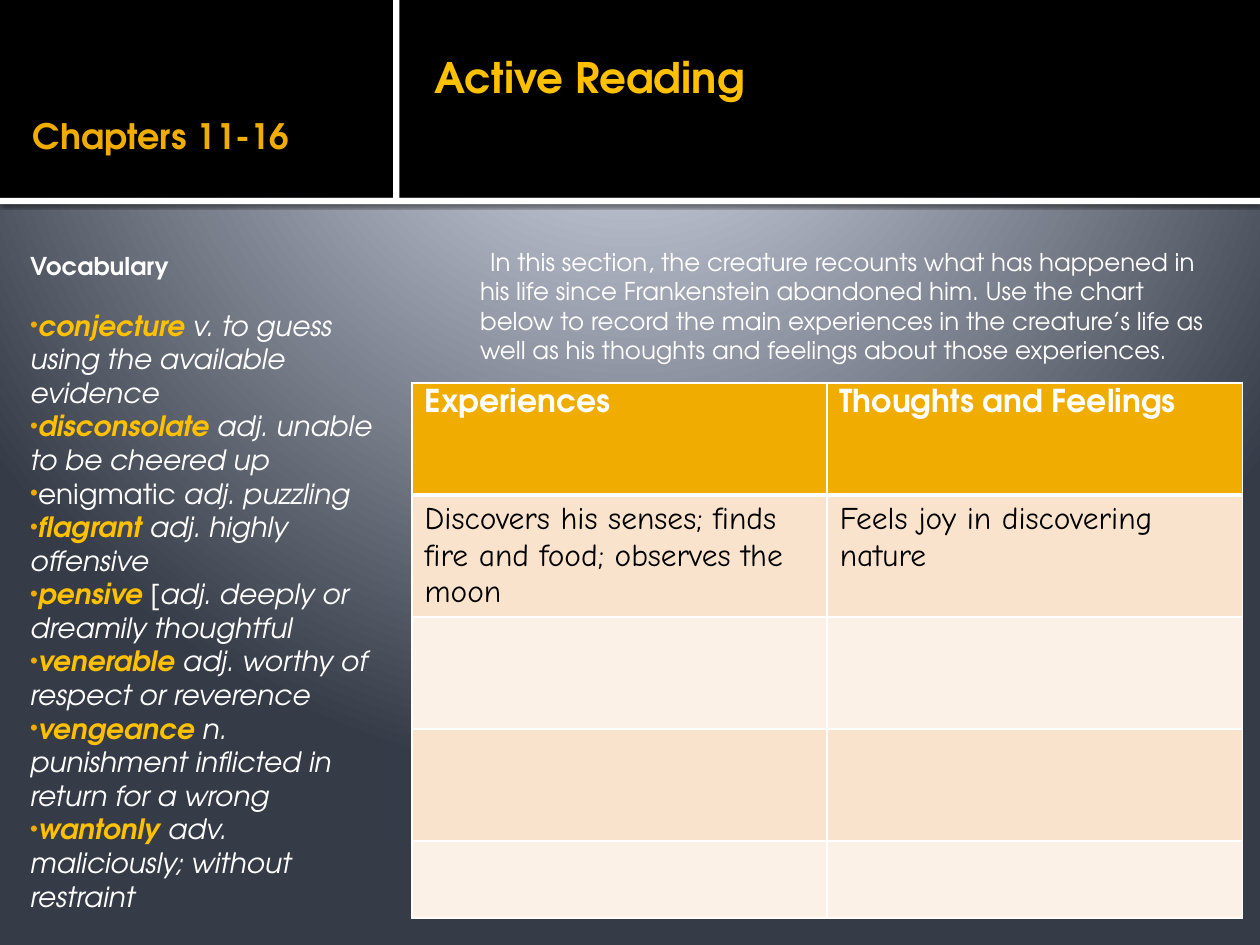
from lxml.etree import SubElement
from pptx import Presentation
from pptx.dml.color import RGBColor
from pptx.enum.shapes import MSO_SHAPE
from pptx.enum.text import MSO_ANCHOR, MSO_AUTO_SIZE, PP_ALIGN
from pptx.oxml import parse_xml
from pptx.oxml.ns import nsdecls, qn
from pptx.util import Inches, Pt

WHITE = RGBColor(0xFF, 0xFF, 0xFF)
BLACK = RGBColor(0, 0, 0)
AMBER = RGBColor(0xF0, 0xAD, 0x00)
GOLD = RGBColor(0xFF, 0xC0, 0x00)
PEACH = RGBColor(0xF9, 0xE3, 0xCC)
CREAM = RGBColor(0xFC, 0xF1, 0xE7)
GRADIENT = [(0, "C1C5D3"), (12, "C1C5D3"), (20, "BFC4D2"), (100, "353B47")]

SANS = "TeX Gyre Adventor"
COMIC = "Comic Neue"
BODY_INSETS = (0.06, 0.1, 0.1, 0.05)

KEY = dict(color=GOLD, bold=True, italic=True)
PLAIN = dict()
DEFINITION = dict(italic=True)
VOCABULARY = [
    [("conjecture ", KEY), ("v. to guess using the available evidence", DEFINITION)],
    [("disconsolate ", KEY), ("adj. unable to be cheered up", DEFINITION)],
    [("enigmatic ", PLAIN), ("adj. puzzling", DEFINITION)],
    [("flagrant ", KEY), ("adj. highly offensive", DEFINITION)],
    [("pensive", KEY), (" [", PLAIN), ("adj. deeply or dreamily thoughtful", DEFINITION)],
    [("venerable ", KEY), ("adj. worthy of respect or reverence", DEFINITION)],
    [("vengeance ", KEY), ("n. punishment inflicted in return for a wrong", DEFINITION)],
    [("wantonly ", KEY), ("adv. maliciously; without restraint", DEFINITION)],
]
INTRO = ("In this section, the creature recounts what has happened in his life since "
         "Frankenstein abandoned him. Use the chart below to record the main experiences "
         "in the creature’s life as well as his thoughts and feelings about those experiences.")
ROWS = [
    ("Experiences", "Thoughts and Feelings"),
    ("Discovers his senses; finds fire and food; observes the moon",
     "Feels joy in discovering nature"),
    ("", ""), ("", ""), ("", ""),
]
ROW_HEIGHTS = [0.89, 0.89, 0.89, 0.89, 0.61]


def add_run(p, text, size=16, color=WHITE, bold=False, italic=False, font=SANS):
    r = p.add_run()
    r.text = text
    f = r.font
    f.name, f.size, f.bold, f.italic = font, Pt(size), bold, italic
    f.color.rgb = color


def set_background(s):
    """Radial gradient centred above the slide."""
    stops = "".join(f'<a:gs pos="{pos * 1000}"><a:srgbClr val="{color}"/></a:gs>'
                    for pos, color in GRADIENT)
    fill = s.background.fill
    fill.solid()
    bg_pr = s.element.cSld.find(qn("p:bg")).find(qn("p:bgPr"))
    bg_pr.replace(bg_pr[0], parse_xml(
        f'<a:gradFill {nsdecls("a")} rotWithShape="1"><a:gsLst>{stops}</a:gsLst>'
        '<a:path path="circle"><a:fillToRect l="10000" t="-25000" r="10000" b="125000"/>'
        '</a:path></a:gradFill>'))


def add_band(s, order, box, color):
    """Plain rectangle placed behind the placeholders."""
    sp = s.shapes.add_shape(MSO_SHAPE.RECTANGLE, *map(Inches, box))
    sp.shadow.inherit = False
    sp.fill.solid()
    sp.fill.fore_color.rgb = color
    sp.line.fill.background()
    s.shapes.element.insert(2 + order, sp.element)
    return sp


def add_shadow(sp):
    effects = sp.element.spPr.find(qn("a:effectLst"))
    effects.append(parse_xml(
        f'<a:outerShdw {nsdecls("a")} blurRad="{Pt(2.5)}" dist="{Pt(0.8)}" dir="5400000">'
        '<a:srgbClr val="000000"><a:alpha val="60000"/></a:srgbClr></a:outerShdw>'))


def place_text(sp, box, insets, anchor=MSO_ANCHOR.TOP):
    sp.left, sp.top, sp.width, sp.height = map(Inches, box)
    tf = sp.text_frame
    tf.word_wrap = True
    tf.auto_size = MSO_AUTO_SIZE.NONE
    tf.vertical_anchor = anchor
    tf.margin_left, tf.margin_top, tf.margin_right, tf.margin_bottom = map(Inches, insets)
    return tf


def format_paragraph(p, bullet=False, left=0, indent=0, after=0):
    p.alignment = PP_ALIGN.LEFT
    p.space_before, p.space_after = Pt(0), Pt(after)
    p_pr = p._p.get_or_add_pPr()
    p_pr.set("marL", str(Inches(left)))
    p_pr.set("indent", str(Inches(indent)))
    if bullet:
        SubElement(SubElement(p_pr, qn("a:buClr")), qn("a:srgbClr")).set("val", str(AMBER))
        SubElement(p_pr, qn("a:buSzPct")).set("val", "80000")
        SubElement(p_pr, qn("a:buChar")).set("char", "•")
    else:
        SubElement(p_pr, qn("a:buNone"))


def fill_vocabulary(tf):
    p = tf.paragraphs[0]
    format_paragraph(p, after=16)
    add_run(p, "Vocabulary", size=14, bold=True)
    for entry in VOCABULARY:
        p = tf.add_paragraph()
        format_paragraph(p, bullet=True)
        for text, style in entry:
            add_run(p, text, **style)


def set_borders(cell, bottom=1, top=1):
    tc_pr = cell._tc.get_or_add_tcPr()
    for i, (side, width) in enumerate([("L", 1), ("R", 1), ("T", top), ("B", bottom)]):
        tc_pr.insert(i, parse_xml(
            f'<a:ln{side} {nsdecls("a")} w="{Pt(width)}"><a:solidFill>'
            f'<a:srgbClr val="{WHITE}"/></a:solidFill></a:ln{side}>'))


def add_experience_table(s):
    table = s.shapes.add_table(len(ROWS), 2, Inches(3.27), Inches(3.04),
                               Inches(6.59), Inches(sum(ROW_HEIGHTS))).table
    for i, (texts, height) in enumerate(zip(ROWS, ROW_HEIGHTS)):
        table.rows[i].height = Inches(height)
        header = i == 0
        for cell, text in zip(table.rows[i].cells, texts):
            cell.fill.solid()
            cell.fill.fore_color.rgb = AMBER if header else PEACH if i % 2 else CREAM
            set_borders(cell, bottom=3 if header else 1, top=3 if i == 1 else 1)
            if text:
                add_run(cell.text_frame.paragraphs[0], text, size=18, bold=header,
                        color=WHITE if header else BLACK, font=SANS if header else COMIC)


def main():
    prs = Presentation()
    prs.slide_width, prs.slide_height = Inches(10), Inches(7.5)
    s = prs.slides.add_slide(prs.slide_layouts[3])
    set_background(s)

    add_shadow(add_band(s, 0, (0, 1.57, 10, 0.05), WHITE))
    add_band(s, 1, (0, 0, 10, 1.57), BLACK)
    add_band(s, 2, (3.12, 0, 0.05, 1.59), WHITE)

    title, intro, vocabulary = s.placeholders
    tf = place_text(title, (0.18, 0.17, 2.76, 1.07), (0.08, 0.05, 0.05, 0), MSO_ANCHOR.BOTTOM)
    format_paragraph(tf.paragraphs[0])
    add_run(tf.paragraphs[0], "Chapters 11-16", size=20, color=AMBER, bold=True)

    tf = place_text(intro, (3.27, 1.86, 6.48, 5.43), BODY_INSETS)
    format_paragraph(tf.paragraphs[0], left=0.48, indent=0.08)
    add_run(tf.paragraphs[0], INTRO, size=14)

    fill_vocabulary(place_text(vocabulary, (0.18, 1.89, 2.93, 5.24), BODY_INSETS))
    add_experience_table(s)

    heading = s.shapes.add_textbox(0, 0, 0, 0)
    tf = place_text(heading, (3.35, 0.36, 6.65, 0.5), (0.1, 0.05, 0.1, 0.05))
    add_run(tf.paragraphs[0], "Active Reading", size=24, color=GOLD, bold=True)

    prs.save("out.pptx")


if __name__ == "__main__":
    main()
